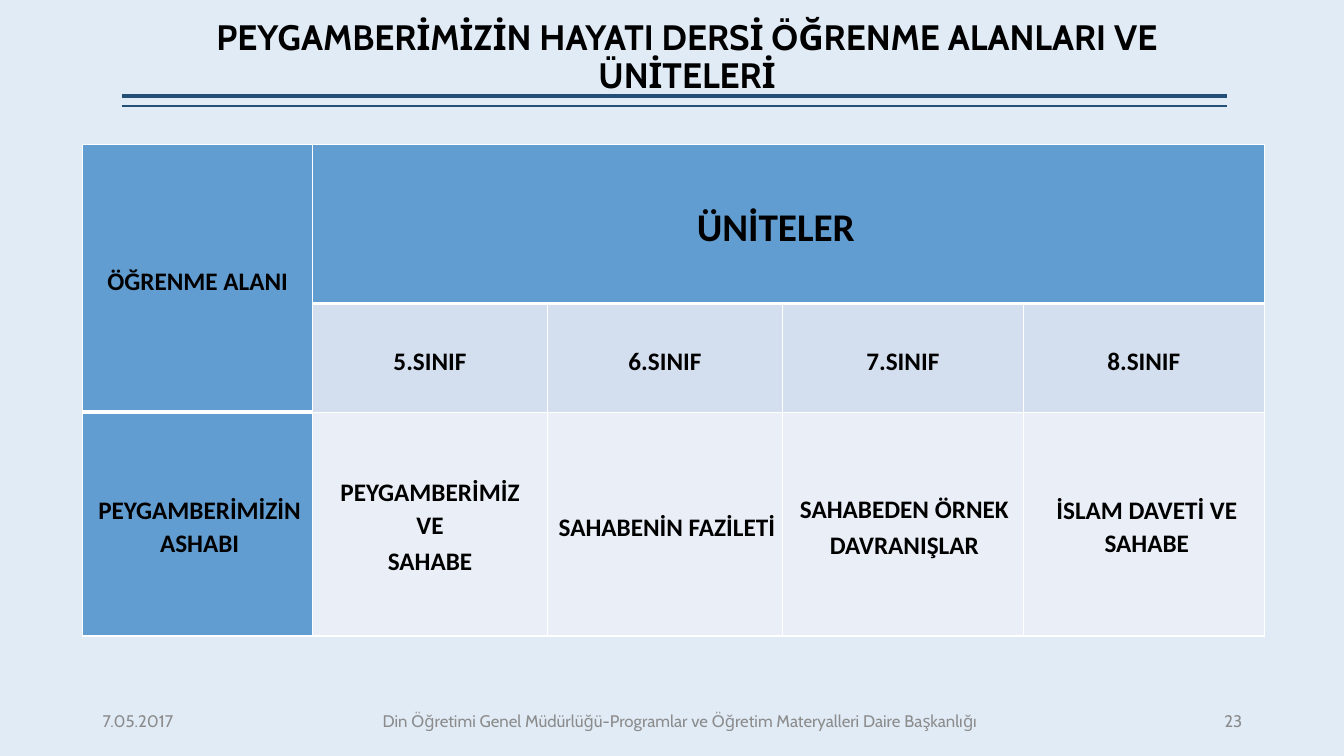
from dataclasses import dataclass

from lxml.etree import SubElement
from pptx import Presentation
from pptx.dml.color import RGBColor
from pptx.enum.shapes import MSO_CONNECTOR
from pptx.enum.text import MSO_ANCHOR, MSO_AUTO_SIZE, PP_ALIGN
from pptx.oxml.ns import qn
from pptx.util import Inches, Pt

COLORS = {
    "background": "E0EBF6",
    "rule": "234F77",
    "ink": "000000",
    "footer": "8C8C8C",
    "header": "629DD1",
    "grade": "D3DFEE",
    "unit": "EAEFF7",
    "border": "FFFFFF",
}
COLUMN_WIDTHS = [2.28, 2.33, 2.33, 2.39, 2.39]
ROW_HEIGHTS = [1.58, 1.08, 2.22]


@dataclass
class Entry:
    lines: list
    fill: str
    size: float = 18
    left: float = 0.07
    right: float = 0.07


GRADES = ["5.SINIF", "6.SINIF", "7.SINIF", "8.SINIF"]
ENTRIES = {
    (0, 0): Entry(["ÖĞRENME ALANI"], "header"),
    (0, 1): Entry(["ÜNİTELER"], "header", size=28, left=0, right=0.25),
    **{(1, column): Entry([grade], "grade") for column, grade in enumerate(GRADES, 1)},
    (2, 0): Entry(["PEYGAMBERİMİZİN ASHABI"], "header", left=0.11),
    (2, 1): Entry(["PEYGAMBERİMİZ VE", "SAHABE"], "unit", left=0.13, right=0.13),
    (2, 2): Entry(["SAHABENİN FAZİLETİ"], "unit", left=0.11),
    (2, 3): Entry(["SAHABEDEN ÖRNEK", "DAVRANIŞLAR"], "unit", left=0.1),
    (2, 4): Entry(["İSLAM DAVETİ VE SAHABE"], "unit", left=0.13),
}


def color(name):
    return RGBColor.from_string(COLORS[name])


def add_run(paragraph, text, font, size, ink, bold=False):
    run = paragraph.add_run()
    run.text = text
    run.font.name = font
    run.font.size = Pt(size)
    run.font.bold = bold
    run.font.color.rgb = color(ink)


def add_heading(slide, left, top, width, height):
    heading = slide.shapes.title
    heading.left, heading.top = Inches(left), Inches(top)
    heading.width, heading.height = Inches(width), Inches(height)
    frame = heading.text_frame
    frame.word_wrap = True
    frame.auto_size = MSO_AUTO_SIZE.NONE
    frame.vertical_anchor = MSO_ANCHOR.MIDDLE
    paragraph = frame.paragraphs[0]
    paragraph.alignment = PP_ALIGN.CENTER
    paragraph.line_spacing = 0.9
    add_run(paragraph, "PEYGAMBERİMİZİN HAYATI DERSİ ÖĞRENME ALANLARI VE ÜNİTELERİ",
            "Cabin", 25.2, "ink", True)


def add_double_rule(slide, left, top, width):
    for offset, weight in [(0, 3), (0.1, 1)]:
        y = Inches(top + offset)
        rule = slide.shapes.add_connector(
            MSO_CONNECTOR.STRAIGHT, Inches(left), y, Inches(left + width), y)
        rule.line.color.rgb = color("rule")
        rule.line.width = Pt(weight)
        SubElement(rule._element.spPr, qn("a:effectLst"))


def set_borders(cell, top, bottom):
    properties = cell._tc.get_or_add_tcPr()
    for side, weight in [("L", 1), ("R", 1), ("T", top), ("B", bottom)]:
        border = SubElement(properties, qn(f"a:ln{side}"), w=str(Pt(weight)))
        fill = SubElement(border, qn("a:solidFill"))
        SubElement(fill, qn("a:srgbClr"), val=COLORS["border"])


def fill_entry(cell, entry):
    cell.fill.solid()
    cell.fill.fore_color.rgb = color(entry.fill)
    cell.vertical_anchor = MSO_ANCHOR.MIDDLE
    cell.margin_left, cell.margin_right = Inches(entry.left), Inches(entry.right)
    cell.margin_top, cell.margin_bottom = Inches(0.05), 0
    frame = cell.text_frame
    for index, line in enumerate(entry.lines):
        paragraph = frame.add_paragraph() if index else frame.paragraphs[0]
        paragraph.alignment = PP_ALIGN.CENTER
        paragraph.line_spacing = 1.07
        if index < len(entry.lines) - 1:
            paragraph.space_after = Pt(2.2)
        add_run(paragraph, line, "Calibri", entry.size, "ink", True)


def add_unit_table(slide, left, top):
    table = slide.shapes.add_table(
        len(ROW_HEIGHTS), len(COLUMN_WIDTHS), Inches(left), Inches(top),
        Inches(sum(COLUMN_WIDTHS)), Inches(sum(ROW_HEIGHTS))).table
    table.first_row = table.horz_banding = False
    for column, width in zip(table.columns, COLUMN_WIDTHS):
        column.width = Inches(width)
    for row, height in zip(table.rows, ROW_HEIGHTS):
        row.height = Inches(height)
    for row in range(len(ROW_HEIGHTS)):
        for column in range(len(COLUMN_WIDTHS)):
            thick_row = 1 if column == 0 else 0
            set_borders(table.cell(row, column),
                        3 if row == thick_row + 1 else 1,
                        3 if row == thick_row else 1)
    table.cell(0, 0).merge(table.cell(1, 0))
    table.cell(0, 1).merge(table.cell(0, 4))
    for (row, column), entry in ENTRIES.items():
        fill_entry(table.cell(row, column), entry)


def add_footer(slide, top, height):
    parts = [
        (0.92, 1.25, PP_ALIGN.LEFT, "7.05.2017"),
        (2.5, 8.49, PP_ALIGN.CENTER,
         "Din Öğretimi Genel Müdürlüğü-Programlar ve Öğretim Materyalleri Daire Başkanlığı"),
        (11.26, 1.16, PP_ALIGN.RIGHT, "23"),
    ]
    for left, width, alignment, text in parts:
        frame = slide.shapes.add_textbox(
            Inches(left), Inches(top), Inches(width), Inches(height)).text_frame
        frame.word_wrap = True
        frame.vertical_anchor = MSO_ANCHOR.MIDDLE
        paragraph = frame.paragraphs[0]
        paragraph.alignment = alignment
        add_run(paragraph, text, "Cabin", 12, "footer")


def main():
    deck = Presentation()
    deck.slide_width, deck.slide_height = Inches(13.33), Inches(7.5)
    slide = deck.slides.add_slide(deck.slide_layouts[5])
    slide.background.fill.solid()
    slide.background.fill.fore_color.rgb = color("background")
    add_double_rule(slide, 1.21, 0.95, 10.96)
    add_heading(slide, 1.21, 0.16, 11.21, 0.84)
    add_unit_table(slide, 0.82, 1.43)
    add_footer(slide, 6.95, 0.4)
    deck.save("out.pptx")


if __name__ == "__main__":
    main()
